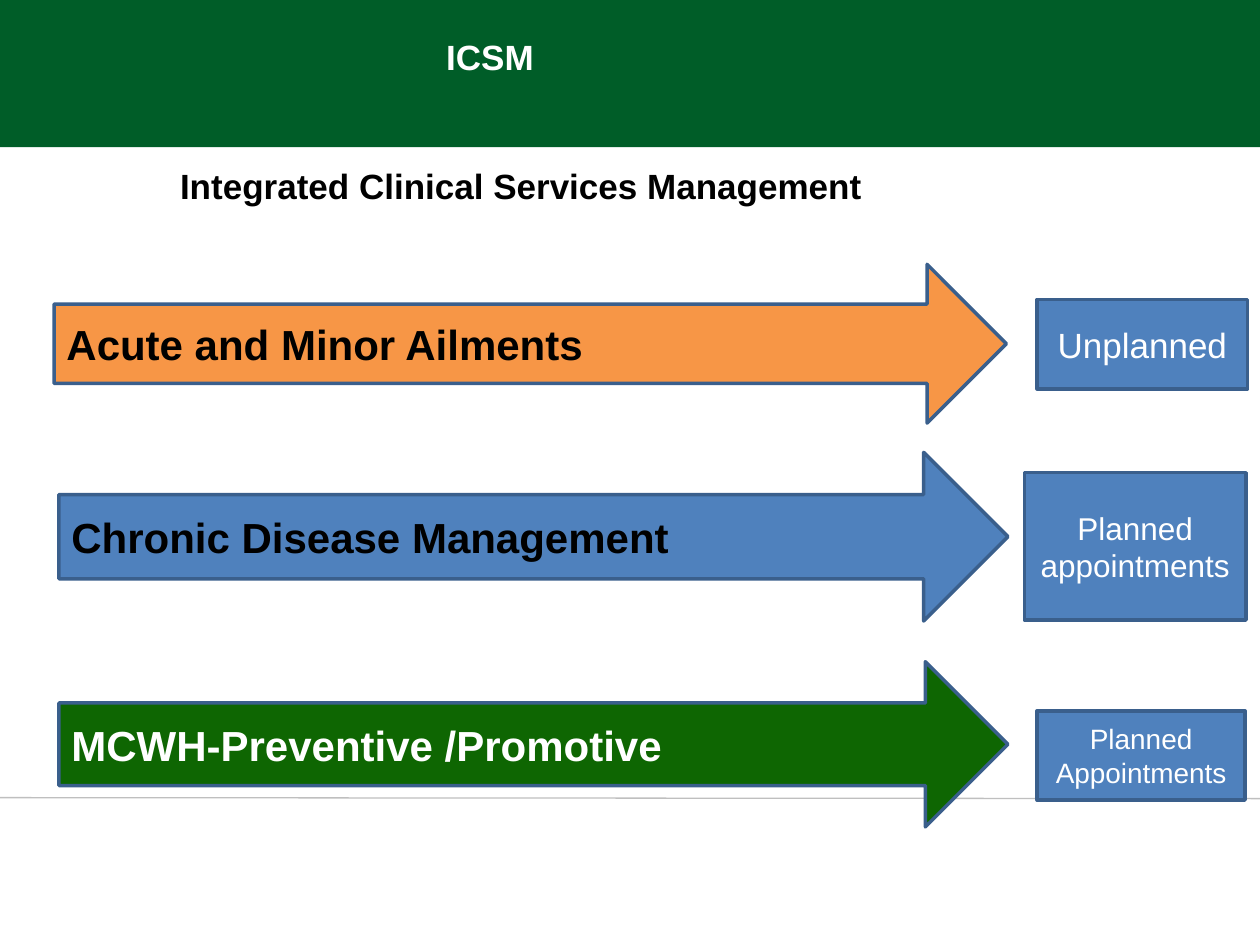
import pptx
import pptx.util
import pptx.dml.color
import pptx.enum.shapes
import pptx.enum.text
from lxml import etree

Cm = pptx.util.Cm
Pt = pptx.util.Pt
SHAPE = pptx.enum.shapes.MSO_SHAPE
ALIGN = pptx.enum.text.PP_ALIGN
ANCHOR = pptx.enum.text.MSO_ANCHOR

COLORS = {
    "banner": "005D28",
    "rule": "BFBFBF",
    "outline": "3A5F8C",
    "orange": "F79646",
    "blue": "4F81BD",
    "green": "0E6602",
    "black": "000000",
    "white": "FFFFFF",
}


def rgb(name):
    """Return the named colour."""
    return pptx.dml.color.RGBColor.from_string(COLORS[name])


def write(sp, text, size, color, bold=False, align=ALIGN.LEFT):
    """Write one line of Arial text, centred vertically, into a shape."""
    tf = sp.text_frame
    tf.word_wrap = True
    tf.auto_size = pptx.enum.text.MSO_AUTO_SIZE.NONE
    tf.vertical_anchor = ANCHOR.MIDDLE
    p = tf.paragraphs[0]
    p.alignment = align
    r = p.add_run()
    r.text = text
    r.font.name = "Arial"
    r.font.size = Pt(size)
    r.font.bold = bold
    r.font.color.rgb = rgb(color)


def add_block(s, kind, box, fill, outline=None):
    """Add a flat filled shape, outlined if a colour is given."""
    sp = s.shapes.add_shape(kind, *map(Cm, box))
    sp.shadow.inherit = False
    sp.fill.solid()
    sp.fill.fore_color.rgb = rgb(fill)
    if outline:
        sp.line.color.rgb = rgb(outline)
        sp.line.width = Pt(2)
    else:
        sp.line.fill.background()
    return sp


def add_header(s, box):
    """Add the banner with the slide title, and the subtitle below it."""
    left, top, width, height = box
    add_block(s, SHAPE.RECTANGLE, box, "banner")
    title = s.shapes.title
    s.shapes._spTree.append(title._element)
    title.left, title.top = Cm(left + 8.74), Cm(top + 0.58)
    title.width, title.height = Cm(5.03), Cm(1.12)
    write(title, "ICSM", 20, "white", bold=True)
    sub = s.shapes.add_textbox(
        Cm(left + 3.38), Cm(top + height + 0.2), Cm(15.67), Cm(1.12))
    write(sub, "Integrated Clinical Services Management", 20, "black", bold=True)


def add_footer_rule(s, box):
    """Add the thin grey line across the bottom."""
    left, top, width, height = map(Cm, box)
    line = s.shapes.add_connector(
        pptx.enum.shapes.MSO_CONNECTOR.STRAIGHT,
        left, top, left + width, top + height)
    line.line.color.rgb = rgb("rule")
    line.line.width = Pt(0.75)
    etree.SubElement(line._element.spPr, pptx.oxml.ns.qn("a:effectLst"))


def add_stream(s, box, arrow, tag):
    """Add a service arrow with its appointment tag at the right of the box."""
    left, top, width, height = box
    text, fill, color, arrow_width = arrow
    sp = add_block(s, SHAPE.RIGHT_ARROW, (left, top, arrow_width, height),
                   fill, "outline")
    write(sp, text, 24, color, bold=True)
    text, size, tag_top, tag_width, tag_height = tag
    sp = add_block(
        s, SHAPE.RECTANGLE,
        (left + width - tag_width, top + tag_top, tag_width, tag_height),
        "blue", "outline")
    write(sp, text, size, "white", align=ALIGN.CENTER)


STREAMS = [
    ((1.09, 5.33, 24.06, 3.2),
     ("Acute and Minor Ailments", "orange", "black", 19.2),
     ("Unplanned", 20, 0.71, 4.24, 1.8)),
    ((1.19, 9.12, 23.93, 3.4),
     ("Chronic Disease Management", "blue", "black", 19.13),
     ("Planned appointments", 18, 0.41, 4.47, 2.97)),
    ((1.19, 13.34, 23.91, 3.33),
     ("MCWH-Preventive /Promotive", "green", "white", 19.13),
     ("Planned Appointments", 16, 0.99, 4.19, 1.8)),
]


def main():
    """Build the slide and save it."""
    prs = pptx.Presentation()
    prs.slide_width, prs.slide_height = Cm(25.4), Cm(19.05)
    s = prs.slides.add_slide(prs.slide_layouts[5])
    add_header(s, (0, 0, 25.4, 2.97))
    add_footer_rule(s, (0, 16.08, 25.4, 0.02))
    for box, arrow, tag in STREAMS:
        add_stream(s, box, arrow, tag)
    prs.save("out.pptx")


if __name__ == "__main__":
    main()
